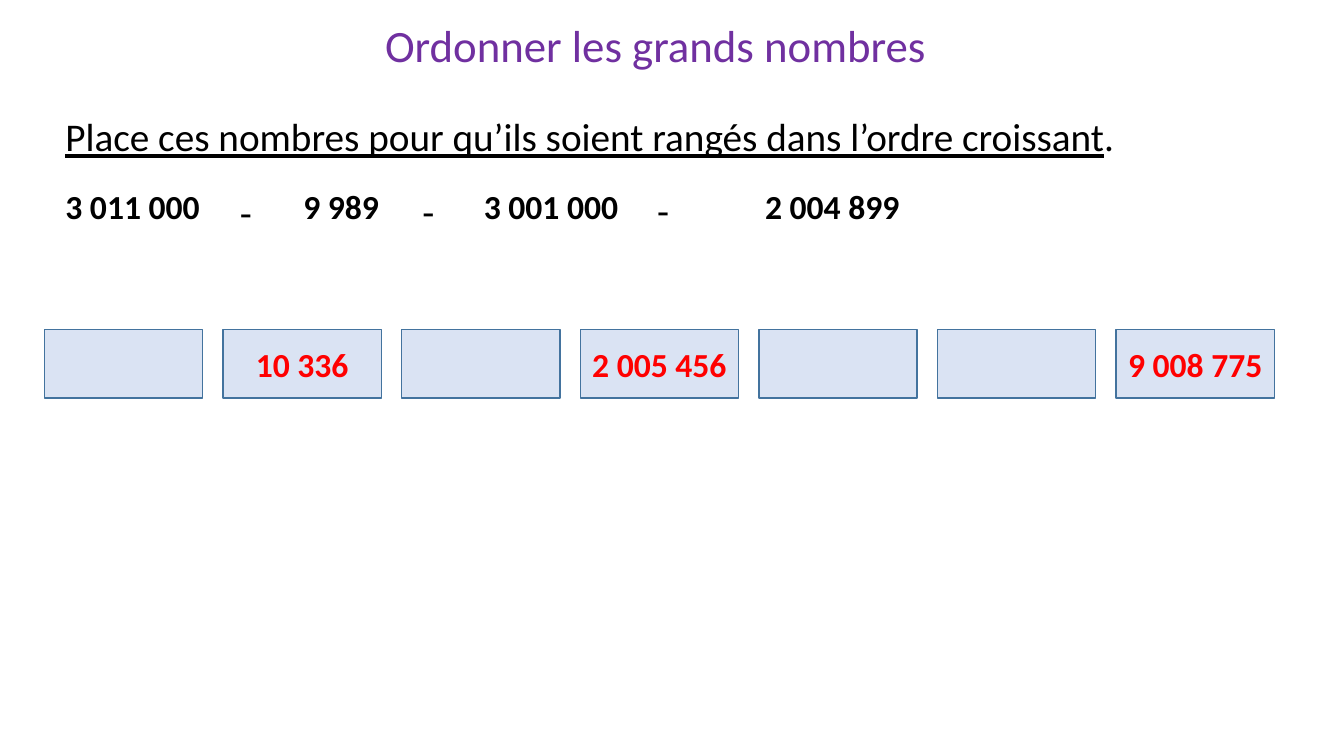
import pptx
import pptx.util
import pptx.dml.color
import pptx.enum.shapes
import pptx.enum.text

Inches = pptx.util.Inches
Pt = pptx.util.Pt

TITLE = "Ordonner les grands nombres"
INSTRUCTION = "Place ces nombres pour qu’ils soient rangés dans l’ordre croissant"
NUMBERS = [("3 011 000", 0.55, 1.92), ("9 989", 2.91, 1.57),
           ("3 001 000", 4.7, 1.57), ("2 004 899", 7.49, 1.57)]
DASHES = [(2.28, 1.82, 0.55), (4.09, 1.81, 0.45), (6.42, 1.8, 0.45)]
ANSWERS = ["", "10 336", "", "2 005 456", "", "", "9 008 775"]

FIRST_LEFT, LAST_LEFT = 0.44, 11.07
ANSWER_TOP, ANSWER_WIDTH, ANSWER_HEIGHT = 3.27, 1.57, 0.68


def color(hex_string):
    return pptx.dml.color.RGBColor.from_string(hex_string)


def write(paragraph, text, size=24, ink="000000", bold=False, underline=False):
    run = paragraph.add_run()
    run.text = text
    run.font.name = "Calibri"
    run.font.size = Pt(size)
    run.font.bold = bold
    run.font.underline = underline
    run.font.color.rgb = color(ink)


def add_line(slide, left, top, width, height):
    frame = slide.shapes.add_textbox(
        Inches(left), Inches(top), Inches(width), Inches(height)).text_frame
    frame.word_wrap = True
    return frame.paragraphs[0]


def add_answer(slide, left, answer):
    box = slide.shapes.add_shape(
        pptx.enum.shapes.MSO_SHAPE.RECTANGLE, Inches(left), Inches(ANSWER_TOP),
        Inches(ANSWER_WIDTH), Inches(ANSWER_HEIGHT))
    box.shadow.inherit = False
    box.fill.solid()
    box.fill.fore_color.rgb = color("DAE3F3")
    box.line.color.rgb = color("43739E")
    box.line.width = Pt(1)
    if answer:
        box.text_frame.vertical_anchor = pptx.enum.text.MSO_ANCHOR.MIDDLE
        paragraph = box.text_frame.paragraphs[0]
        paragraph.alignment = pptx.enum.text.PP_ALIGN.CENTER
        write(paragraph, answer, ink="FF0000", bold=True)


def main():
    deck = pptx.Presentation()
    deck.slide_width = Inches(13.33)
    deck.slide_height = Inches(7.5)
    slide = deck.slides.add_slide(deck.slide_layouts[6])

    title = add_line(slide, 3.72, 0.19, 6.78, 0.88)
    title.line_spacing = 0.9
    write(title, TITLE, size=32, ink="7030A0")

    instruction = add_line(slide, 0.55, 1.07, 11.49, 0.57)
    write(instruction, INSTRUCTION, size=28, underline=True)
    write(instruction, ".", size=28)

    pitch = (LAST_LEFT - FIRST_LEFT) / (len(ANSWERS) - 1)
    for index, answer in enumerate(ANSWERS):
        add_answer(slide, FIRST_LEFT + index * pitch, answer)

    for number, left, width in NUMBERS:
        write(add_line(slide, left, 1.8, width, 0.5), number, bold=True)
    for left, top, width in DASHES:
        write(add_line(slide, left, top, width, 0.57), "-", size=28)

    deck.save("out.pptx")


if __name__ == "__main__":
    main()
